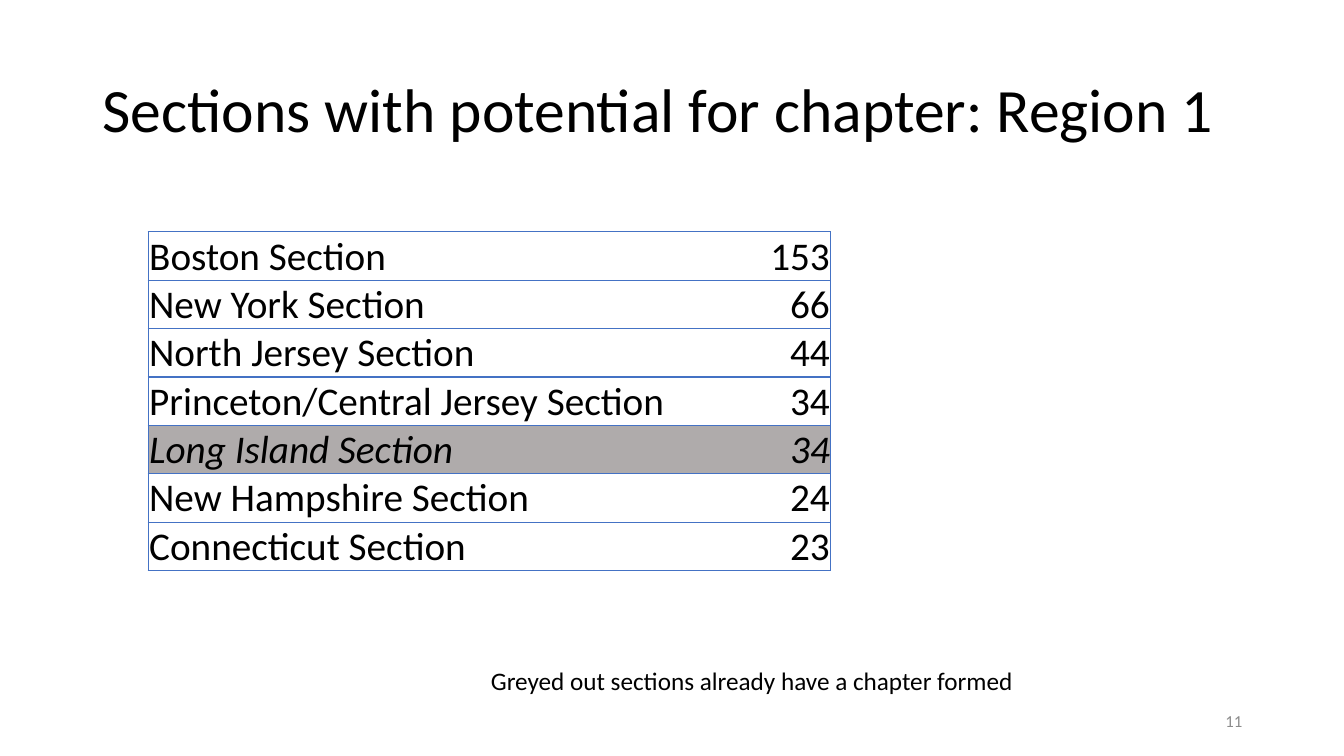
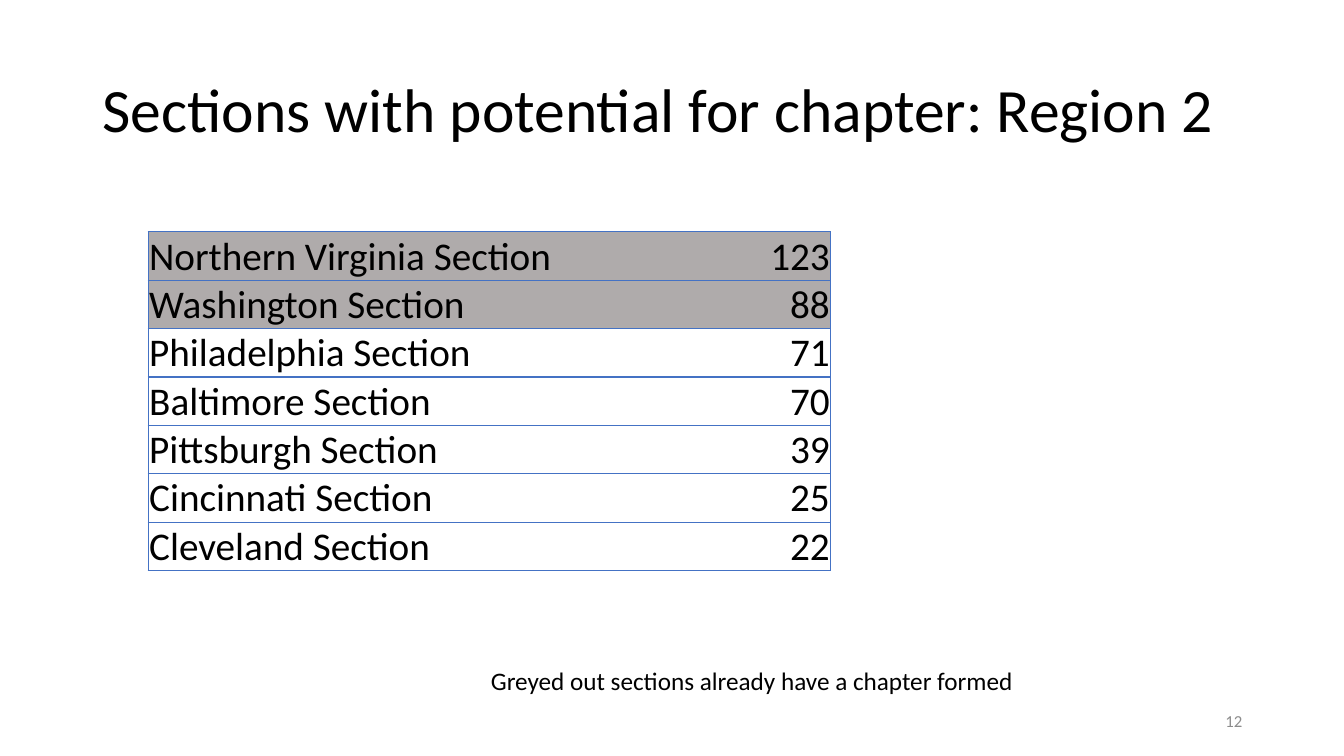
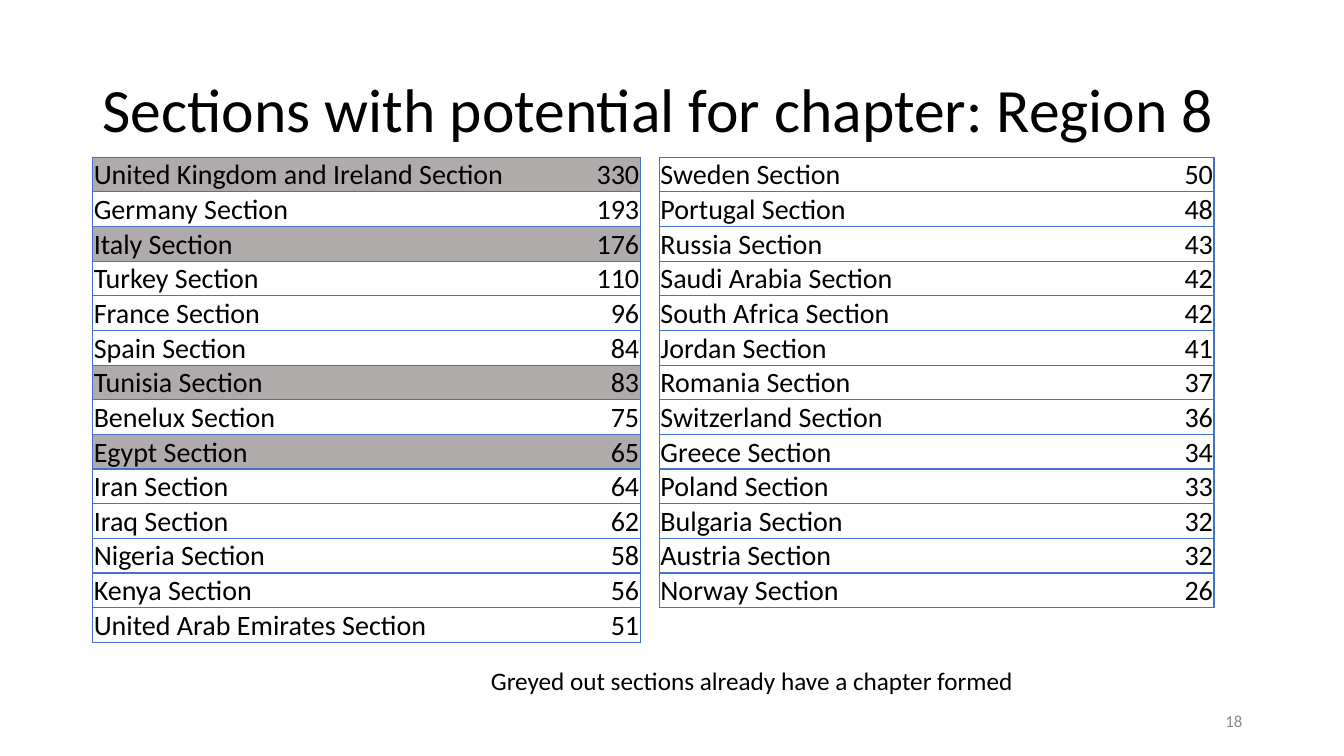
from lxml.etree import SubElement
from pptx import Presentation
from pptx.dml.color import RGBColor
from pptx.enum.text import MSO_ANCHOR as Anchor, PP_ALIGN as Align
from pptx.oxml.ns import qn
from pptx.util import Inches, Pt

COLORS = {"text": "000000", "number": "8C8C8C", "border": "4472C4",
          "open": "FFFFFF", "formed": "AFABAB"}
FONT = "Calibri"
TABLE_STYLE = {"size": 28, "row": 0.48}
DENSE_STYLE = {"size": 20, "row": 0.34}

# Each table: left, top, column widths, style, rows of section and member count
REGIONS = [
    {"region": 1, "page": 11, "formed": ["Long Island"], "italic": ["Long Island"],
     "tables": [(1.47, 2.3, (5.81, 0.96), TABLE_STYLE, [
         ("Boston", 153), ("New York", 66), ("North Jersey", 44),
         ("Princeton/Central Jersey", 34), ("Long Island", 34),
         ("New Hampshire", 24), ("Connecticut", 23)])]},
    {"region": 2, "page": 12, "formed": ["Northern Virginia", "Washington"], "italic": [],
     "tables": [(1.47, 2.3, (5.81, 0.96), TABLE_STYLE, [
         ("Northern Virginia", 123), ("Washington", 88), ("Philadelphia", 71),
         ("Baltimore", 70), ("Pittsburgh", 39), ("Cincinnati", 25),
         ("Cleveland", 22)])]},
    {"region": 8, "page": 18, "italic": [],
     "formed": ["United Kingdom and Ireland", "Italy", "Tunisia", "Egypt"],
     "tables": [
         (0.92, 1.56, (4.66, 0.77), DENSE_STYLE, [
             ("United Kingdom and Ireland", 330), ("Germany", 193), ("Italy", 176),
             ("Turkey", 110), ("France", 96), ("Spain", 84), ("Tunisia", 83),
             ("Benelux", 75), ("Egypt", 65), ("Iran", 64), ("Iraq", 62),
             ("Nigeria", 58), ("Kenya", 56), ("United Arab Emirates", 51)]),
         (6.54, 1.56, (4.72, 0.78), DENSE_STYLE, [
             ("Sweden", 50), ("Portugal", 48), ("Russia", 43), ("Saudi Arabia", 42),
             ("South Africa", 42), ("Jordan", 41), ("Romania", 37),
             ("Switzerland", 36), ("Greece", 34), ("Poland", 33),
             ("Bulgaria", 32), ("Austria", 32), ("Norway", 26)])]},
]


def write(frame, text, size, color="text", align=Align.LEFT):
    frame.word_wrap = True
    paragraph = frame.paragraphs[0]
    paragraph.text = text
    paragraph.alignment = align
    paragraph.font.name = FONT
    paragraph.font.size = Pt(size)
    paragraph.font.color.rgb = RGBColor.from_string(COLORS[color])
    return paragraph


def set_borders(cell, open_side):
    properties = cell._tc.get_or_add_tcPr()
    for side in ("lnL", "lnR", "lnT", "lnB"):
        line = SubElement(properties, qn(f"a:{side}"), w=str(Pt(1)))
        if side == open_side:
            SubElement(line, qn("a:noFill"))
        else:
            fill = SubElement(line, qn("a:solidFill"))
            SubElement(fill, qn("a:srgbClr"), val=COLORS["border"])


presentation = Presentation()
presentation.slide_width = Inches(13.33)
presentation.slide_height = Inches(7.5)

for region in REGIONS:
    slide = presentation.slides.add_slide(presentation.slide_layouts[6])

    # Title
    title = slide.shapes.add_textbox(Inches(0.92), Inches(0.74), Inches(11.5), Inches(1.1))
    heading = f"Sections with potential for chapter: Region {region['region']}"
    write(title.text_frame, heading, 44).line_spacing = 0.9

    # Section tables
    for left, top, widths, style, sections in region["tables"]:
        table = slide.shapes.add_table(
            len(sections), len(widths), Inches(left), Inches(top),
            Inches(sum(widths)), Inches(style["row"] * len(sections))).table
        table.first_row = False
        table.horz_banding = False
        for column, width in zip(table.columns, widths):
            column.width = Inches(width)
        for row, (section, members) in zip(table.rows, sections):
            row.height = Inches(style["row"])
            contents = [(f"{section} Section", Align.LEFT, "lnR"),
                        (str(members), Align.RIGHT, "lnL")]
            for cell, (text, align, open_side) in zip(row.cells, contents):
                cell.margin_left = cell.margin_top = cell.margin_right = Inches(0.01)
                cell.margin_bottom = 0
                cell.vertical_anchor = Anchor.BOTTOM
                set_borders(cell, open_side)
                cell.fill.solid()
                status = "formed" if section in region["formed"] else "open"
                cell.fill.fore_color.rgb = RGBColor.from_string(COLORS[status])
                paragraph = write(cell.text_frame, text, style["size"], align=align)
                paragraph.font.italic = section in region["italic"]

    # Note and page number
    note = slide.shapes.add_textbox(Inches(4.77), Inches(6.55), Inches(5.92), Inches(0.4))
    write(note.text_frame, "Greyed out sections already have a chapter formed", 18)
    number = slide.shapes.add_textbox(Inches(9.42), Inches(6.95), Inches(3), Inches(0.4))
    number.text_frame.vertical_anchor = Anchor.MIDDLE
    write(number.text_frame, str(region["page"]), 12, "number", Align.RIGHT)

presentation.save("out.pptx")
